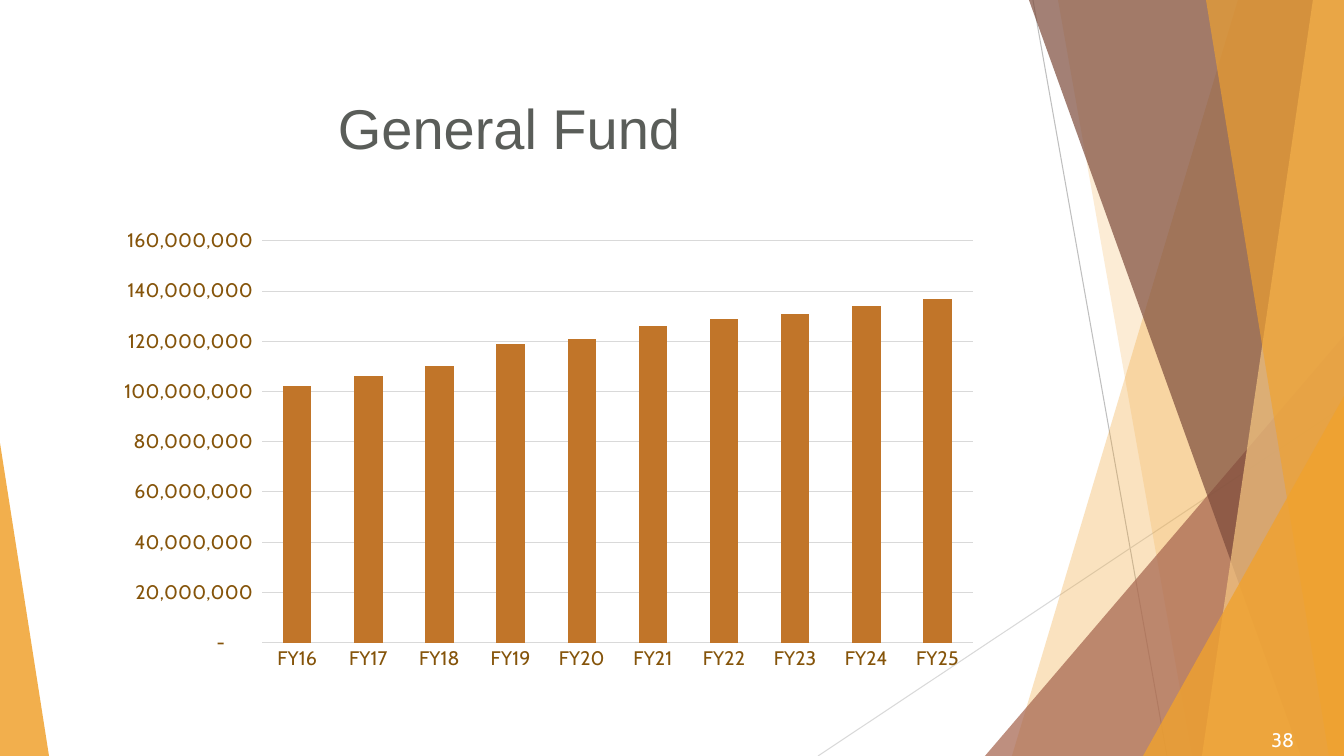
from dataclasses import dataclass

from lxml.etree import SubElement
from pptx import Presentation
from pptx.chart.data import CategoryChartData
from pptx.dml.color import RGBColor
from pptx.enum.chart import XL_CHART_TYPE, XL_TICK_MARK
from pptx.enum.shapes import MSO_CONNECTOR, MSO_SHAPE
from pptx.enum.text import MSO_ANCHOR, PP_ALIGN
from pptx.oxml import parse_xml
from pptx.oxml.ns import nsdecls, qn
from pptx.util import Pt

PX = 914400 / 100.8
WIDE, HIGH = 1344, 756


@dataclass(frozen=True)
class Theme:
    gold: str = "F0A22E"
    pale: str = "F6C782"
    rust: str = "A5644E"
    brown: str = "7C4B3B"
    bar: str = "C17529"
    label: str = "85540A"
    title: str = "5A5D59"
    white: str = "FFFFFF"
    grid: str = "D9D9D9"
    rule: str = "BFBFBF"
    head: str = "Arial"
    body: str = "Cabin"
    big: int = 40
    small: int = 14
    thin: float = 0.75


LOOK = Theme()

# Title and page number: words, box, font, size, colour, align, anchor
TEXTS = [
    ("General Fund", (328, 40, 827, 126), LOOK.head, LOOK.big, LOOK.title,
     PP_ALIGN.LEFT, MSO_ANCHOR.BOTTOM),
    ("38", (1213, 723, 91, 33), LOOK.body, LOOK.small, LOOK.white,
     PP_ALIGN.RIGHT, MSO_ANCHOR.MIDDLE),
]

# Fund balance in millions for each fiscal year
FUND = {
    "FY16": 102, "FY17": 106, "FY18": 110, "FY19": 119, "FY20": 121,
    "FY21": 126, "FY22": 129, "FY23": 131, "FY24": 134, "FY25": 137,
}
MILLION = 1_000_000
FORMAT = '_(* #,##0_);_(* \\(#,##0\\);_(* "-"??_);_(@_)'
CHART = (120, 210, 873, 482)
PLOT = {"x": 0.157, "y": 0.064, "w": 0.82, "h": 0.834}

RULES = [
    ((1033, 0), (1167, HIGH), LOOK.rule),
    ((WIDE, 406), (818, HIGH), LOOK.grid),
]

# Back to front. A band gives the x of its left edge at top and at bottom;
# a wedge gives its box and which end its tip is on.
DECOR = [
    ("band", (1238, 1012), LOOK.gold, 30),
    ("band", (1058, 1192), LOOK.gold, 20),
    ("wedge", (985, 336, 359, 420, 1), LOOK.rust, 72),
    ("band", (1029, 1301), LOOK.brown, 70),
    ("band", (1313, 1202), LOOK.pale, 70),
    ("band", (1206, 1329), LOOK.gold, 65),
    ("wedge", (1143, 396, 201, 360, 1), LOOK.gold, 80),
    ("wedge", (0, 443, 49, 313, 0), LOOK.gold, 85),
]


def emu(*nums):
    return [round(n * PX) for n in nums]


def rgb(tone):
    return RGBColor.from_string(tone)


def style(font, name, size, tone):
    font.name, font.size, font.color.rgb = name, Pt(size), rgb(tone)


def stroke(line, tone):
    line.color.rgb, line.width = rgb(tone), Pt(LOOK.thin)


def add_rule(shapes, start, end, tone):
    rule = shapes.add_connector(MSO_CONNECTOR.STRAIGHT, *emu(*start, *end))
    stroke(rule.line, tone)
    SubElement(rule.element.spPr, qn("a:effectLst"))


def add_band(shapes, top, foot):
    pen = shapes.build_freeform(top, 0, scale=PX)
    pen.add_line_segments([(WIDE, 0), (WIDE, HIGH), (foot, HIGH)], close=True)
    return pen.convert_to_shape()


def add_wedge(shapes, left, top, width, height, tip):
    wedge = shapes.add_shape(MSO_SHAPE.ISOSCELES_TRIANGLE,
                             *emu(left, top, width, height))
    wedge.adjustments[0] = tip
    return wedge


def tint(shape, tone, alpha):
    """Fill with a see-through colour; alpha is percent opaque."""
    shape.shadow.inherit = False
    shape.line.fill.background()
    shape.fill.solid()
    shape.fill.fore_color.rgb = rgb(tone)
    color = shape.element.spPr.find(qn("a:solidFill")).find(qn("a:srgbClr"))
    SubElement(color, qn("a:alpha"), val=str(alpha * 1000))


def add_text(shapes, words, box, name, size, tone, align, anchor):
    frame = shapes.add_textbox(*emu(*box)).text_frame
    frame.word_wrap, frame.vertical_anchor = True, anchor
    para = frame.paragraphs[0]
    para.alignment = align
    run = para.add_run()
    run.text = words
    style(run.font, name, size, tone)


def place_plot(chart):
    """Fix the inner plot area as fractions of the chart."""
    area = chart.element.find(qn("c:chart")).find(qn("c:plotArea"))
    for old in area.findall(qn("c:layout")):
        area.remove(old)
    sizes = "".join(f'<c:{key} val="{val}"/>' for key, val in PLOT.items())
    area.insert(0, parse_xml(
        f'<c:layout {nsdecls("c")}><c:manualLayout>'
        '<c:layoutTarget val="inner"/><c:xMode val="edge"/>'
        f'<c:yMode val="edge"/>{sizes}</c:manualLayout></c:layout>'))


def add_fund(shapes):
    data = CategoryChartData(number_format=FORMAT)
    data.categories = list(FUND)
    data.add_series("Series 1", [val * MILLION for val in FUND.values()])
    chart = shapes.add_chart(XL_CHART_TYPE.COLUMN_CLUSTERED,
                             *emu(*CHART), data).chart
    chart.has_legend = chart.has_title = False
    style(chart.font, LOOK.body, LOOK.small, LOOK.label)
    for axis in (chart.category_axis, chart.value_axis):
        axis.major_tick_mark = axis.minor_tick_mark = XL_TICK_MARK.NONE
        axis.format.line.fill.background()
        style(axis.tick_labels.font, LOOK.body, LOOK.small, LOOK.label)
    scale = chart.value_axis
    scale.minimum_scale, scale.maximum_scale = 0, 160 * MILLION
    scale.major_unit = 20 * MILLION
    scale.tick_labels.number_format = FORMAT
    scale.tick_labels.number_format_is_linked = False
    stroke(scale.major_gridlines.format.line, LOOK.grid)
    plot = chart.plots[0]
    plot.gap_width, plot.vary_by_categories = 150, False
    fill = plot.series[0].format.fill
    fill.solid()
    fill.fore_color.rgb = rgb(LOOK.bar)
    place_plot(chart)


def main():
    deck = Presentation()
    deck.slide_width, deck.slide_height = emu(WIDE, HIGH)
    shapes = deck.slides.add_slide(deck.slide_layouts[6]).shapes
    for rule in RULES:
        add_rule(shapes, *rule)
    draw = {"band": add_band, "wedge": add_wedge}
    for kind, dims, tone, alpha in DECOR:
        tint(draw[kind](shapes, *dims), tone, alpha)
    for text in TEXTS:
        add_text(shapes, *text)
    add_fund(shapes)
    deck.save("out.pptx")


if __name__ == "__main__":
    main()
